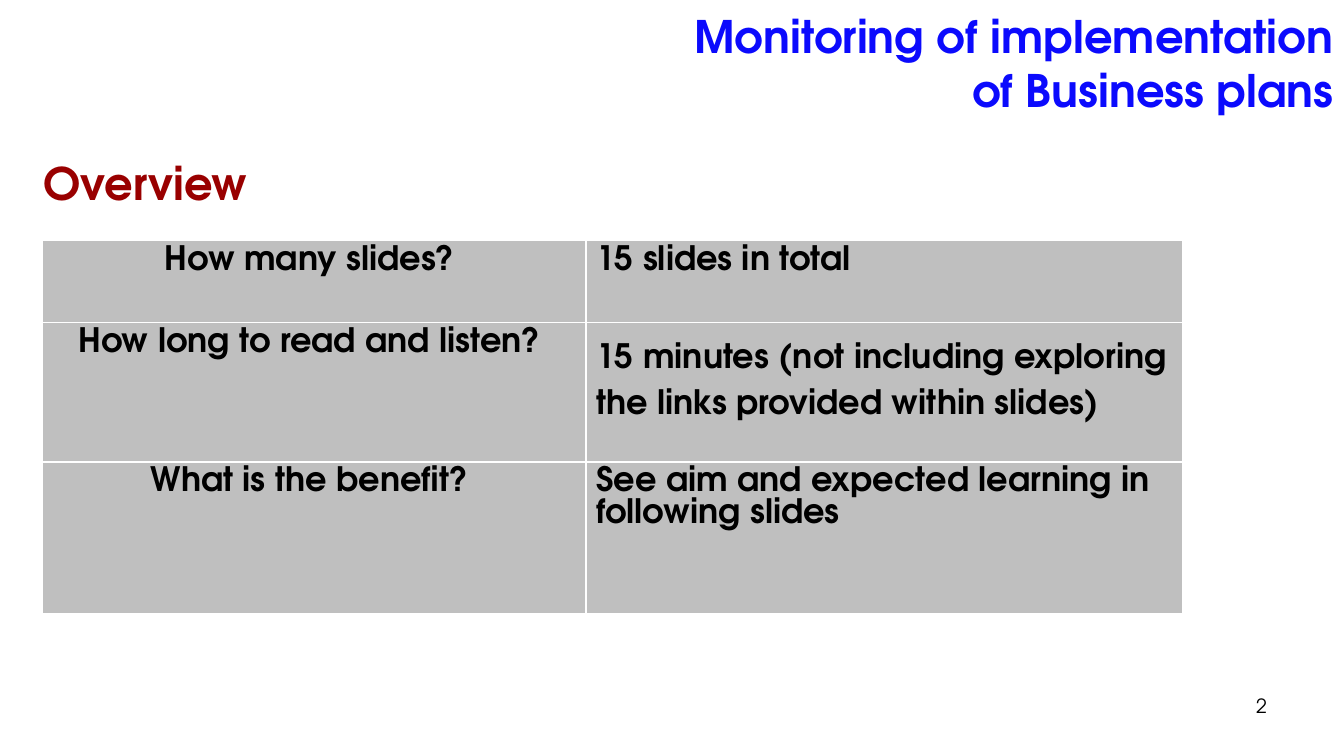
"""Build the overview slide on monitoring business plans."""
from lxml.etree import SubElement
from pptx import Presentation
from pptx.dml.color import RGBColor
from pptx.enum.text import MSO_ANCHOR, PP_ALIGN as Align
from pptx.oxml.ns import qn
from pptx.util import Cm, Pt

FONT = "TeX Gyre Adventor"


def color(value):
    return RGBColor.from_string(value)


def write(frame, text, size, text_color, bold=True, align=Align.LEFT, spacing=None):
    frame.word_wrap = True
    paragraph = frame.paragraphs[0]
    paragraph.text = text
    paragraph.alignment = align
    paragraph.line_spacing = spacing
    font = paragraph.font
    font.name, font.size, font.bold = FONT, Pt(size), bold
    font.color.rgb = color(text_color)


presentation = Presentation()
presentation.slide_width, presentation.slide_height = Cm(33.87), Cm(19.05)
slide = presentation.slides.add_slide(presentation.slide_layouts[6])

title = slide.shapes.add_textbox(Cm(2.34), Cm(0), Cm(31.52), Cm(3.05)).text_frame
title.vertical_anchor = MSO_ANCHOR.BOTTOM
write(title, "Monitoring of implementation\vof Business plans", 32, "0B0AFD", align=Align.RIGHT)

heading = slide.shapes.add_textbox(Cm(0.84), Cm(3.8), Cm(8.23), Cm(1.7)).text_frame
write(heading, "Overview", 32, "990000")

number = slide.shapes.add_textbox(Cm(24.28), Cm(17.35), Cm(7.9), Cm(1.32)).text_frame
write(number, "2", 14, "000000", bold=False, align=Align.RIGHT)

rows = [
    ("How many slides? ", "15 slides in total", None, 2.06),
    ("How long to read and listen? ",
     "15 minutes (not including exploring the links provided within slides)", 1.5, 3.51),
    ("What is the benefit? ", "See aim and expected learning in following slides", None, 3.81),
]
table = slide.shapes.add_table(3, 2, Cm(1.07), Cm(6.07), Cm(28.73), Cm(9.38)).table
table.columns[0].width, table.columns[1].width = Cm(13.7), Cm(15.03)

for row, (question, answer, spacing, height) in enumerate(rows):
    table.rows[row].height = Cm(height)
    for column, (text, align, line_spacing) in enumerate(
            [(question, Align.CENTER, None), (answer, Align.LEFT, spacing)]):
        cell = table.cell(row, column)
        cell.margin_top = cell.margin_bottom = Cm(0.13)
        write(cell.text_frame, text, 24, "000000", align=align, spacing=line_spacing)
        properties = cell._tc.get_or_add_tcPr()
        for side in ("a:lnL", "a:lnR", "a:lnT", "a:lnB"):
            border = SubElement(properties, qn(side), w=str(Pt(1)))
            fill = SubElement(border, qn("a:solidFill"))
            SubElement(fill, qn("a:srgbClr"), val="FFFFFF")
        cell.fill.solid()
        cell.fill.fore_color.rgb = color("BFBFBF")

presentation.save("out.pptx")
